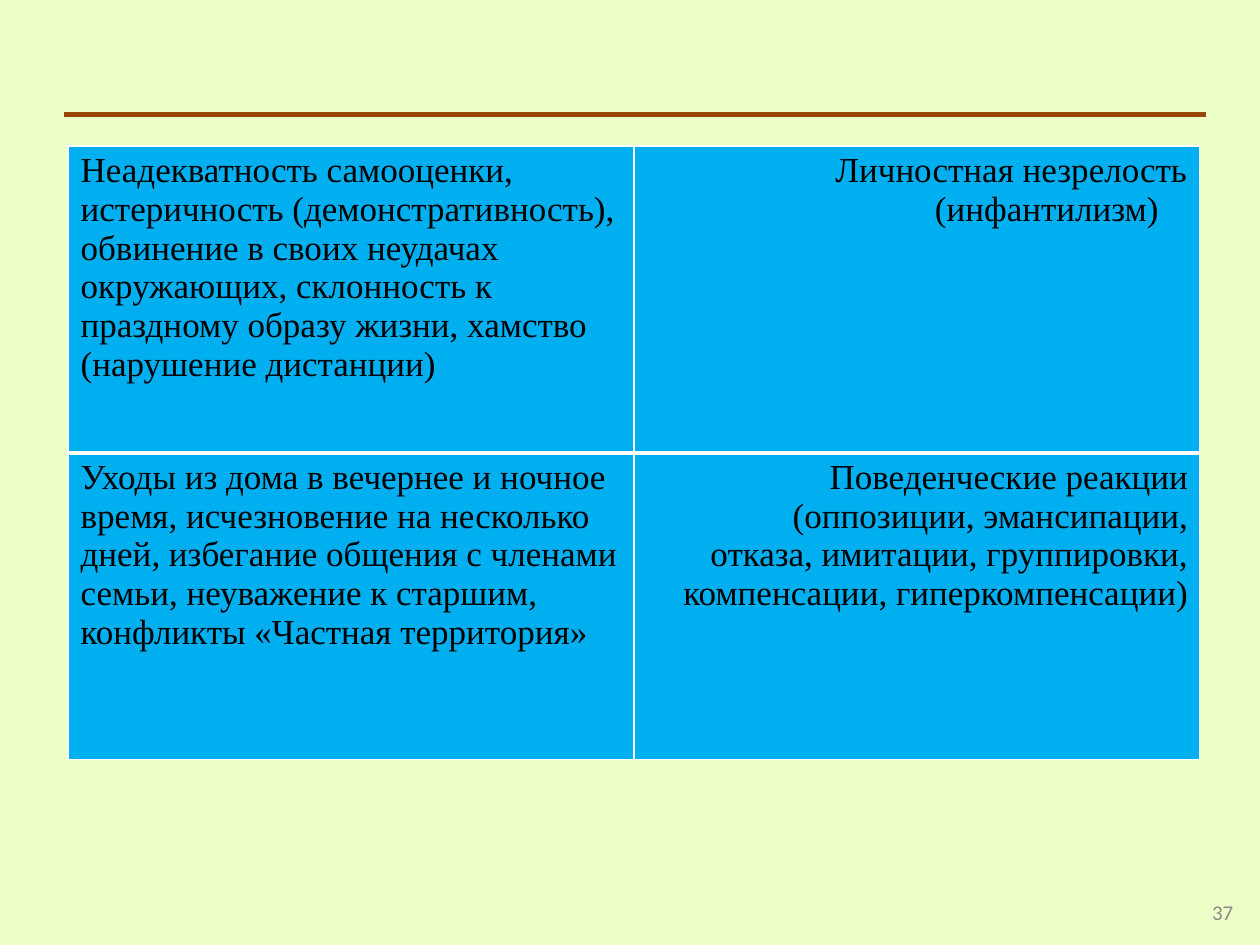
import lxml.etree
import pptx
import pptx.dml.color
import pptx.enum.shapes
import pptx.enum.text
import pptx.oxml.ns
import pptx.util

Inches = pptx.util.Inches
Pt = pptx.util.Pt
ALIGN = pptx.enum.text.PP_ALIGN

SELF_ESTEEM = [
    ("Неадекватность самооценки, истеричность (демонстративность), обвинение в своих неудачах", 0.1),
    ("окружающих, склонность к", 0.1),
    ("праздному образу жизни, хамство", 0.1),
    ("(нарушение дистанции)", 0.1),
]
IMMATURITY = [("Личностная незрелость", 1.6), ("(инфантилизм)", 2.39)]
LEAVING_HOME = [
    ("Уходы из дома в вечернее и ночное", 0.1),
    ("время, исчезновение на несколько", 0.1),
    ("дней, избегание общения с членами семьи, неуважение к старшим, "
     "конфликты «Частная территория»", 0.1),
]
REACTIONS = [
    ("Поведенческие реакции\v(оппозиции, эмансипации,\vотказа, имитации, группировки,", 0),
    ("компенсации, гиперкомпенсации)", 0),
]
ROWS = [
    [(SELF_ESTEEM, ALIGN.LEFT), (IMMATURITY, ALIGN.LEFT)],
    [(LEAVING_HOME, ALIGN.LEFT), (REACTIONS, ALIGN.RIGHT)],
]


def color(hex_string):
    return pptx.dml.color.RGBColor.from_string(hex_string)


def set_font(paragraph, name, size, hex_string):
    paragraph.font.name = name
    paragraph.font.size = Pt(size)
    paragraph.font.color.rgb = color(hex_string)


def add_border(cell, side, width):
    properties = cell._tc.get_or_add_tcPr()
    border = lxml.etree.Element(pptx.oxml.ns.qn(f"a:{side}"), w=str(Pt(width)))
    fill = lxml.etree.SubElement(border, pptx.oxml.ns.qn("a:solidFill"))
    lxml.etree.SubElement(fill, pptx.oxml.ns.qn("a:srgbClr"), val="FFFFFF")
    properties.append(border)


def fill_cell(cell, passages, alignment, top_border, bottom_border):
    for side, width in (("lnL", 1), ("lnR", 1), ("lnT", top_border), ("lnB", bottom_border)):
        add_border(cell, side, width)
    cell.fill.solid()
    cell.fill.fore_color.rgb = color("00AFEF")
    cell.margin_left = cell.margin_bottom = 0
    cell.margin_top = Inches(0.04)
    cell.margin_right = Inches(0.09) if alignment == ALIGN.RIGHT else 0
    for index, (passage, indent) in enumerate(passages):
        frame = cell.text_frame
        paragraph = frame.add_paragraph() if index else frame.paragraphs[0]
        paragraph.text = passage
        paragraph.alignment = alignment
        paragraph.space_before = Pt(0 if index else 3)
        paragraph._p.get_or_add_pPr().set("marL", str(Inches(indent)))
        set_font(paragraph, "Times New Roman", 20, "000000")


def add_behaviour_table(slide, left, top, width, height):
    table = slide.shapes.add_table(len(ROWS), len(ROWS[0]), left, top, width, height).table
    last = len(ROWS) - 1
    for row, contents in enumerate(ROWS):
        for column, (passages, alignment) in enumerate(contents):
            fill_cell(table.cell(row, column), passages, alignment,
                      3 if row else 1, 3 if row < last else 1)


def add_title_rule(slide, left, top, width):
    rule = slide.shapes.add_connector(
        pptx.enum.shapes.MSO_CONNECTOR.STRAIGHT, left, top, left + width, top)
    rule.line.color.rgb = color("974707")
    rule.line.width = Pt(3)
    lxml.etree.SubElement(rule._element.spPr, pptx.oxml.ns.qn("a:effectLst"))


def add_page_number(slide, left, top, width, height):
    frame = slide.shapes.add_textbox(left, top, width, height).text_frame
    frame.word_wrap = True
    frame.margin_left = frame.margin_right = frame.margin_top = frame.margin_bottom = 0
    number = frame.paragraphs[0]
    number.text = "37"
    number.line_spacing = Pt(12.4)
    number._p.get_or_add_pPr().set("marL", str(Inches(0.04)))
    set_font(number, "Calibri", 12, "888888")


def main():
    presentation = pptx.Presentation()
    presentation.slide_width = Inches(10)
    presentation.slide_height = Inches(7.5)
    slide = presentation.slides.add_slide(presentation.slide_layouts[6])
    slide.background.fill.solid()
    slide.background.fill.fore_color.rgb = color("ECFFC6")
    add_title_rule(slide, Inches(0.51), Inches(0.91), Inches(9.06))
    add_behaviour_table(slide, Inches(0.54), Inches(1.16), Inches(8.98), Inches(4.87))
    add_page_number(slide, Inches(9.58), Inches(7.17), Inches(0.25), Inches(0.19))
    presentation.save("out.pptx")


if __name__ == "__main__":
    main()
